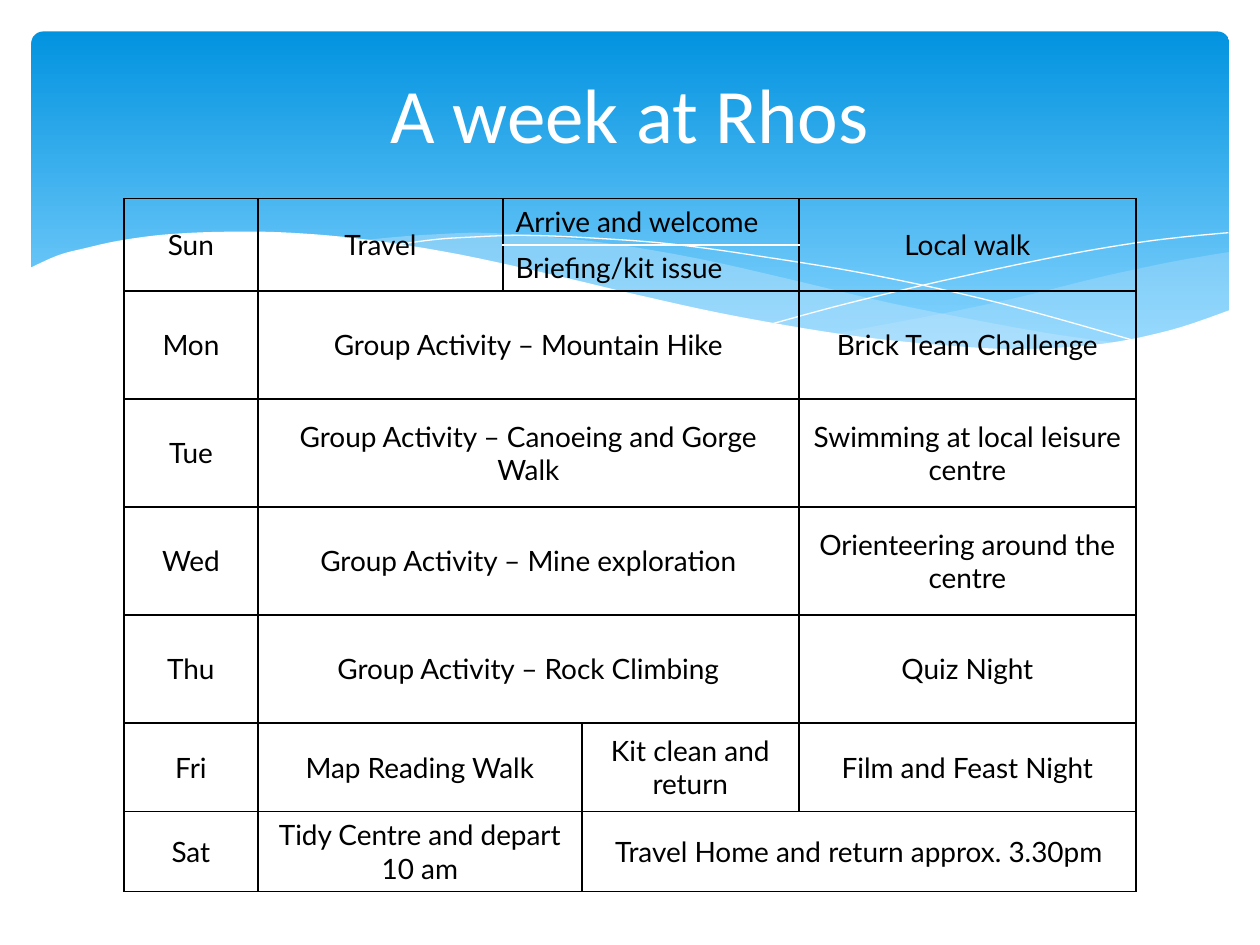
import dataclasses

import lxml.etree
import pptx
import pptx.dml.color
import pptx.enum.dml
import pptx.enum.shapes
import pptx.enum.text
import pptx.oxml.ns
import pptx.util

Pt = pptx.util.Pt
RGB = pptx.dml.color.RGBColor.from_string
qn = pptx.oxml.ns.qn
ALIGN = pptx.enum.text.PP_ALIGN
MID = pptx.enum.text.MSO_ANCHOR.MIDDLE


@dataclasses.dataclass(frozen=True)
class Theme:
    white: str = "FFFFFF"
    ink: str = "000000"
    deep: str = "0293E0"
    sky: str = "83D3FE"
    mist: str = "C6E7FC"
    head: tuple = ("Calibri", 44)
    body: tuple = ("Lato", 16)
    rule: float = 1


THEME = Theme()

# Curves are knots in points from the top left of the banner.
SWELLS = [
    (29, [[(684.5, 126), (655, 131), (623.5, 137.5), (602, 142.5), (561.5, 152.5),
           (524, 160.5), (490, 167), (458, 173)],
          [(458, 173), (489.5, 177), (518.5, 180), (560, 182), (597, 180.5),
           (628, 176.5), (655, 170.5), (675.5, 163.5), (684.5, 160)]]),
    (40, [[(625, 178.5), (584.5, 173), (540, 165), (490, 155), (435, 142),
           (391.5, 132), (352, 124.5), (317, 119.5), (284.5, 116.5),
           (255.5, 115), (229.5, 116), (207.5, 117.5), (188, 119.5)],
          [(188, 119.5), (228, 125.5), (273, 134), (305, 142), (363.5, 155),
           (414.5, 165.5), (461, 173.5), (502, 179), (538.5, 181.5),
           (571, 182), (599, 181.5), (625, 178.5)]]),
]
THREADS = [
    [(204.5, 122.5), (229.5, 119), (251.5, 117.5), (281.5, 116.5), (319.5, 118),
     (366, 121.5), (420, 129), (482.5, 139.5), (554.5, 155.5), (635, 178)],
    [(423.5, 167), (466, 155.5), (520.5, 142.5), (584, 129), (626.5, 121.5),
     (657.5, 117.5), (684, 115)],
]
FLOOR = [
    [(685.5, 159), (651.5, 170.5), (612, 178.5), (564.5, 181.5), (517.5, 179),
     (463, 173), (399, 162), (344, 150), (304, 140.5), (245, 127.5), (192, 119),
     (147.5, 115), (109.5, 114.5), (77, 116), (50.5, 119.5), (30, 124),
     (15, 128), (-1.5, 135.5)],
    [(-1.5, 219), (685.5, 219)],
]

COLS = [76.6, 140, 45.1, 124, 192.7]
ROWS = [26.4] * 2 + [61.7] * 4 + [50.7, 45.6]
# Each cell: row, column, rows spanned, columns spanned, text.
CELLS = [
    (0, 0, 2, 1, "Sun"), (0, 1, 2, 1, "Travel"),
    (0, 2, 1, 2, "Arrive and welcome"), (1, 2, 1, 2, "Briefing/kit issue"),
    (0, 4, 2, 1, "Local walk"),
    (6, 0, 1, 1, "Fri"), (6, 1, 1, 2, "Map Reading Walk"),
    (6, 3, 1, 1, "Kit clean and return"), (6, 4, 1, 1, "Film and Feast Night"),
    (7, 0, 1, 1, "Sat"), (7, 1, 1, 2, "Tidy Centre and depart 10 am"),
    (7, 3, 1, 2, "Travel Home and return approx. 3.30pm"),
]
DAYS = [
    ("Mon", "Mountain Hike", "Brick Team Challenge"),
    ("Tue", "Canoeing and Gorge Walk", "Swimming at local leisure centre"),
    ("Wed", "Mine exploration", "Orienteering around the centre"),
    ("Thu", "Rock Climbing", "Quiz Night"),
]
for row, (day, task, night) in enumerate(DAYS, 2):
    CELLS += [(row, 0, 1, 1, day), (row, 1, 1, 3, f"Group Activity – {task}"),
              (row, 4, 1, 1, night)]
# Edges left undrawn, so that the two welcome lines read as one cell.
OPEN = {(0, 2): "B", (1, 2): "T"}


def put(obj, form):
    for name, value in form.items():
        setattr(obj, name, value)


def write(frame, text, face, color, align=ALIGN.CENTER):
    para = frame.paragraphs[0]
    para.alignment = align
    run = para.add_run()
    run.text = text
    name, size = face
    put(run.font, {"name": name, "size": Pt(size)})
    run.font.color.rgb = RGB(color)


def smooth(knots, steps=6):
    """Return points on a Catmull-Rom curve through the knots."""
    if len(knots) < 3:
        return knots
    ends = [knots[0], *knots, knots[-1]]
    out = [knots[0]]
    for a, b, c, d in zip(ends, ends[1:], ends[2:], ends[3:]):
        for i in range(1, steps + 1):
            t = i / steps
            out.append(tuple(
                (2 * q + (r - p) * t + (2 * p - 5 * q + 4 * r - s) * t ** 2
                 + (3 * q - p - 3 * r + s) * t ** 3) / 2
                for p, q, r, s in zip(a, b, c, d)))
    return out


def trace(slide, box, arcs, close=True):
    """Draw the arcs, joined end to end, as one outline."""
    left, top = box[:2]
    dots = [(Pt(left + x), Pt(top + y)) for arc in arcs for x, y in smooth(arc)]
    pen = slide.shapes.build_freeform(*dots[0])
    pen.add_line_segments(dots[1:], close=close)
    shape = pen.convert_to_shape()
    shape.shadow.inherit = False
    return shape


def paint(shape, color, alpha=100):
    shape.fill.solid()
    shape.fill.fore_color.rgb = RGB(color)
    shape.line.fill.background()
    if alpha < 100:
        tone = shape.fill._xPr.find(".//" + qn("a:srgbClr"))
        lxml.etree.SubElement(tone, qn("a:alpha"), val=str(alpha * 1000))


def banner(slide, box):
    kind = pptx.enum.shapes.MSO_SHAPE.ROUNDED_RECTANGLE
    panel = slide.shapes.add_shape(kind, *map(Pt, box))
    panel.shadow.inherit = False
    panel.adjustments[0] = 0.034
    panel.line.fill.background()
    panel.fill.gradient()
    panel.fill.gradient_angle = 270
    tones = [(0, THEME.deep), (0.9, THEME.sky)]
    for stop, (place, color) in zip(panel.fill.gradient_stops, tones):
        stop.position = place
        stop.color.rgb = RGB(color)
    for alpha, arcs in SWELLS:
        paint(trace(slide, box, arcs), THEME.mist, alpha)
    for arc in THREADS:
        thread = trace(slide, box, [arc], close=False)
        thread.fill.background()
        thread.line.color.rgb = RGB(THEME.white)
        thread.line.width = Pt(0)
    paint(trace(slide, box, FLOOR), THEME.white)


def title(slide, box, text):
    frame = slide.shapes.add_textbox(*map(Pt, box)).text_frame
    put(frame, {"word_wrap": True, "vertical_anchor": MID})
    write(frame, text, THEME.head, THEME.white)


def edge(cell, sides):
    props = cell._tc.get_or_add_tcPr()
    for side in sides:
        line = lxml.etree.SubElement(props, qn("a:ln" + side),
                                     w=str(Pt(THEME.rule)))
        fill = lxml.etree.SubElement(line, qn("a:solidFill"))
        lxml.etree.SubElement(fill, qn("a:srgbClr"), val=THEME.ink)


def week(slide, box):
    grid = slide.shapes.add_table(len(ROWS), len(COLS), *map(Pt, box)).table
    put(grid, {"first_row": False, "horz_banding": False})
    for col, width in zip(grid.columns, COLS):
        col.width = Pt(width)
    for row, height in zip(grid.rows, ROWS):
        row.height = Pt(height)
    for row, col, down, over, text in CELLS:
        gap = OPEN.get((row, col), "")
        for y in range(row, row + down):
            for x in range(col, col + over):
                part = grid.cell(y, x)
                edge(part, [side for side in "LRTB" if side != gap])
                part.fill.background()
        cell = grid.cell(row, col)
        if down * over > 1:
            cell.merge(grid.cell(row + down - 1, col + over - 1))
        cell.vertical_anchor = MID
        align = ALIGN.LEFT if gap else ALIGN.CENTER
        write(cell.text_frame, text, THEME.body, THEME.ink, align)


def main():
    deck = pptx.Presentation()
    put(deck, {"slide_width": Pt(720), "slide_height": Pt(540)})
    slide = deck.slides.add_slide(deck.slide_layouts[6])
    banner(slide, (18, 18, 684.5, 194.5))
    title(slide, (36, 15, 648, 99), "A week at Rhos")
    week(slide, (70.8, 113.5, sum(COLS), sum(ROWS)))
    deck.save("out.pptx")


if __name__ == "__main__":
    main()
